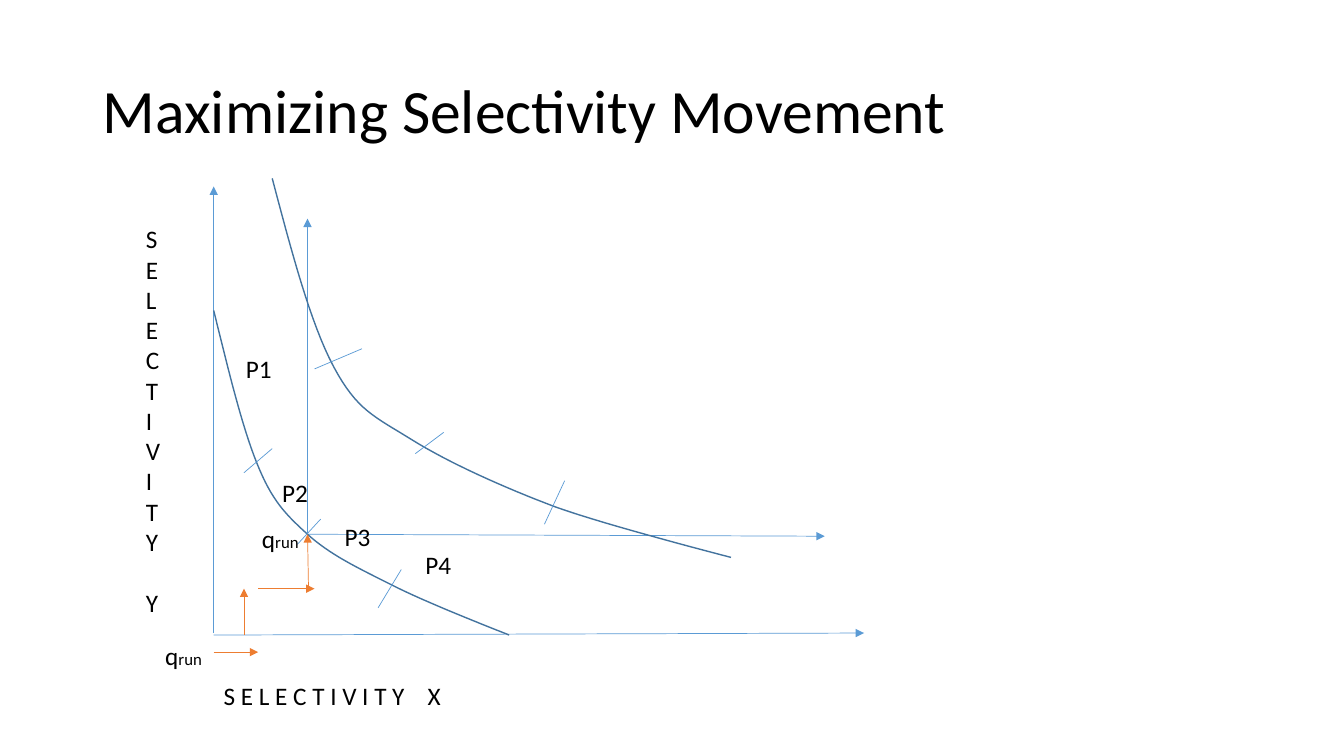
from lxml import etree
from pptx import Presentation
from pptx.dml.color import RGBColor
from pptx.enum.shapes import MSO_CONNECTOR as Connector
from pptx.enum.text import MSO_ANCHOR as Anchor
from pptx.oxml.ns import qn
from pptx.util import Inches, Pt

BLUE, CURVE_BLUE, ORANGE, BLACK = "5B9BD5", "43739E", "ED7D31", "000000"
LINE_HEIGHT = 22  # points, one line of 18 pt text


def color(value):
    return RGBColor.from_string(value)


def add_span(para, text, size=18, spacing=None):
    span = para.add_run()
    span.text = text
    for name, value in {"name": "Calibri", "size": Pt(size)}.items():
        setattr(span.font, name, value)
    span.font.color.rgb = color(BLACK)
    if spacing:
        span.font._element.set("spc", str(spacing))


def add_box(page, left, top, width, height, spans=(), anchor=Anchor.TOP):
    """Text box whose first paragraph holds the given (text, size) spans."""
    box = page.shapes.add_textbox(*map(Inches, (left, top, width, height)))
    for name, value in {"word_wrap": True, "vertical_anchor": anchor}.items():
        setattr(box.text_frame, name, value)
    for span in spans:
        add_span(box.text_frame.paragraphs[0], *span)
    return box.text_frame


def add_line(page, start, end, line_color=BLUE, arrow=False):
    line = page.shapes.add_connector(Connector.STRAIGHT, *map(Inches, (*start, *end)))
    line.line.color.rgb = color(line_color)
    line.line.width = Pt(0.5)
    if arrow:
        etree.SubElement(line.line._get_or_add_ln(), qn("a:tailEnd"), type="triangle")
    etree.SubElement(line._element.spPr, qn("a:effectLst"))


def bezier_point(points, t):
    weights = ((1 - t) ** 3, 3 * t * (1 - t) ** 2, 3 * t ** 2 * (1 - t), t ** 3)
    return tuple(Inches(sum(w * point[axis] for w, point in zip(weights, points)))
                 for axis in (0, 1))


def add_curve(page, points, steps=16):
    """Smooth open curve through chained cubic Bezier segments."""
    outline = [bezier_point(points[first:first + 4], step / steps)
               for first in range(0, len(points) - 1, 3)
               for step in range(1, steps + 1)]
    builder = page.shapes.build_freeform(*map(Inches, points[0]))
    builder.add_line_segments(outline, close=False)
    curve = builder.convert_to_shape()
    curve.shadow.inherit = False
    curve.fill.background()
    curve.line.color.rgb = color(CURVE_BLUE)
    curve.line.width = Pt(1)


def add_title(page, left, top, width, height):
    frame = add_box(page, left, top, width, height,
                    [("Maximizing Selectivity Movement", 44)], Anchor.MIDDLE)
    frame.paragraphs[0].line_spacing = 0.9


def add_axis_titles(page, left, top):
    # Vertical title, one letter per paragraph
    frame = add_box(page, left, top, 0.47, 4.34)
    for index, letter in enumerate("SELECTIVITYY"):
        para = frame.add_paragraph() if index else frame.paragraphs[0]
        add_span(para, letter)
    para.space_before = Pt(LINE_HEIGHT)

    # Horizontal title, with a wide gap before the axis name
    add_box(page, left + 0.77, top + 4.53, 6.05, 0.4,
            [("S E L E C T I V I T Y",), (" ", 18, 1220), ("X",)])


def add_diagram(page, left, top):
    """Draw the axes, curves, ticks and steps from the top left corner."""
    def at(x, y):
        return left + x, top + y

    # Outer axes, then axes through the operating point
    for start, end in [((0, 4.51), (0, 0.08)), ((0, 4.53), (6.45, 4.51)),
                       ((0.93, 3.53), (0.93, 0.4)), ((0.93, 3.53), (6.06, 3.55))]:
        add_line(page, at(*start), at(*end), arrow=True)

    # Selectivity curves
    lower = [(0, 1.31), (0.14, 1.88), (0.28, 2.46), (0.43, 2.83), (0.58, 3.2),
             (0.71, 3.33), (0.93, 3.53), (1.15, 3.73), (1.42, 3.86),
             (1.76, 4.03), (2.09, 4.2), (2.73, 4.45), (2.93, 4.53)]
    upper = [(0.58, 0), (0.77, 0.72), (0.96, 1.44), (1.19, 1.87), (1.42, 2.3),
             (1.59, 2.36), (1.96, 2.59), (2.33, 2.82), (2.86, 3.06),
             (3.39, 3.26), (3.92, 3.45), (5.13, 3.76), (5.13, 3.76)]
    for points in (lower, upper):
        add_curve(page, [at(*point) for point in points])

    # Tick marks across the curves
    for start, end in [((0.3, 2.92), (0.58, 2.68)), ((0.83, 3.63), (1.06, 3.38)),
                       ((1.63, 4.26), (1.86, 3.88)), ((1.47, 1.69), (1, 1.89)),
                       ((2, 2.73), (2.28, 2.52)), ((3.48, 3), (3.28, 3.43))]:
        add_line(page, at(*start), at(*end))

    # Steps towards the operating point
    for start, end in [((0, 4.7), (0.44, 4.7)), ((0.44, 4.07), (1, 4.07)),
                       ((0.3, 4.53), (0.3, 4.07)), ((0.94, 4.07), (0.93, 3.53))]:
        add_line(page, at(*start), at(*end), ORANGE, arrow=True)

    # Point labels
    for number, (x, y, width) in enumerate([(0.22, 1.69, 0.61), (0.58, 2.92, 0.48),
                                            (1.2, 3.35, 0.8), (2, 3.63, 0.93)], 1):
        add_box(page, *at(x, y), width, 0.4, [(f"P{number}",)])

    # Run labels
    for x, y, width in [(-0.58, 4.53, 0.78), (0.38, 3.37, 0.6)]:
        add_box(page, *at(x, y), width, 0.4, [("q", 18), ("run", 12)])


def main():
    deck = Presentation()
    deck.slide_width, deck.slide_height = Inches(13.33), Inches(7.5)
    page = deck.slides.add_slide(deck.slide_layouts[6])
    add_title(page, 0.92, 0.4, 11.5, 1.45)
    add_diagram(page, 2.12, 1.77)
    add_axis_titles(page, 1.35, 2.17)
    deck.save("out.pptx")


if __name__ == "__main__":
    main()
